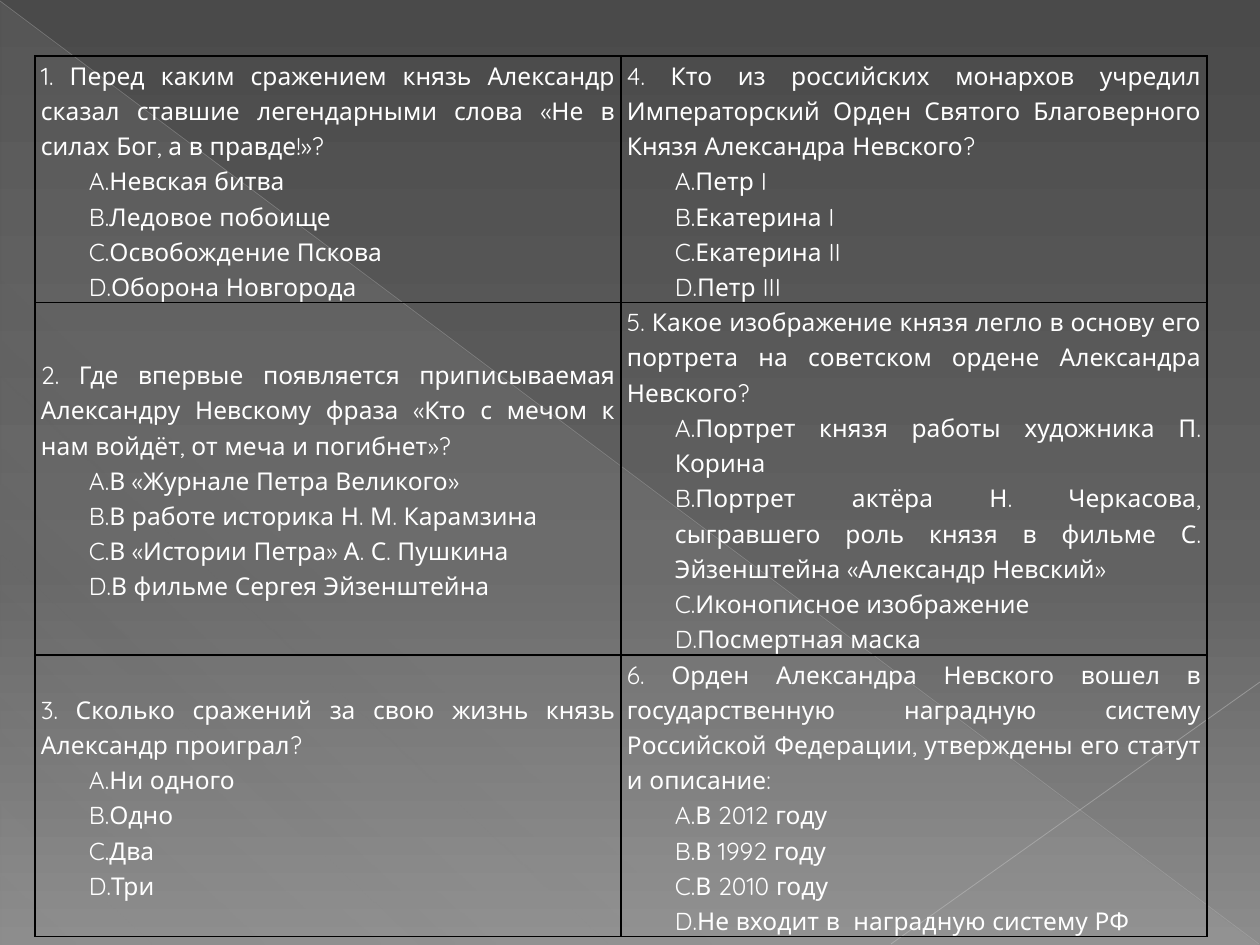
from dataclasses import dataclass

from lxml.etree import SubElement
from pptx import Presentation
from pptx.dml.color import RGBColor
from pptx.enum.shapes import MSO_CONNECTOR, MSO_SHAPE
from pptx.enum.text import MSO_ANCHOR, PP_ALIGN
from pptx.oxml.ns import qn
from pptx.util import Emu, Pt

PX_PER_INCH = 126


@dataclass(frozen=True)
class Theme:
    font: str = "Quicksand"
    text_size: int = 14
    line_spacing: float = 1.15
    text: str = "FFFFFF"
    border: str = "000000"
    border_width: int = 1
    # Gradient stops: position, colour, opacity in percent
    backdrop: tuple = ((0, "4A4A4A", 100), (60, "626262", 100), (100, "8C8C8C", 100))
    sheen: tuple = ((0, "D2D2D2", 10), (70, "D2D2D2", 8), (100, "D2D2D2", 1))
    long_ray: str = "BFBFBF"
    short_ray: str = "C6C6C6"


THEME = Theme()

# Each row holds a left and a right question with its answers
QUIZ = [
    [
        ("1. Перед каким сражением князь Александр сказал ставшие легендарными слова «Не в силах Бог, а в правде!»?",
         ["Невская битва", "Ледовое побоище", "Освобождение Пскова", "Оборона Новгорода"]),
        ("4. Кто из российских монархов учредил Императорский Орден Святого Благоверного Князя Александра Невского?",
         ["Петр I", "Екатерина I", "Екатерина II", "Петр III"]),
    ],
    [
        ("2. Где впервые появляется приписываемая Александру Невскому фраза «Кто с мечом к нам войдёт, от меча и погибнет»?",
         ["В «Журнале Петра Великого»", "В работе историка Н. М. Карамзина",
          "В «Истории Петра» А. С. Пушкина", "В фильме Сергея Эйзенштейна"]),
        ("5. Какое изображение князя легло в основу его портрета на советском ордене Александра Невского?",
         ["Портрет князя работы художника П. Корина",
          "Портрет актёра Н. Черкасова, сыгравшего роль князя в фильме С. Эйзенштейна «Александр Невский»",
          "Иконописное изображение", "Посмертная маска"]),
    ],
    [
        ("3. Сколько сражений за свою жизнь князь Александр проиграл?",
         ["Ни одного", "Одно", "Два", "Три"]),
        ("6. Орден Александра Невского вошел в государственную наградную систему Российской Федерации, утверждены его статут и описание:",
         ["В 2012 году", "В 1992 году", "В 2010 году", "Не входит в  наградную систему РФ"]),
    ],
]
ROW_HEIGHTS = (217, 325, 243)
COLUMN_WIDTH = 586
ANSWER_INDENT = 48
CELL_MARGIN = 6


def px(length):
    return Emu(round(length * 914400 / PX_PER_INCH))


def add_color(parent, color, opacity=100):
    srgb = SubElement(parent, qn("a:srgbClr"), val=color)
    if opacity < 100:
        SubElement(srgb, qn("a:alpha"), val=str(opacity * 1000))


def paint_gradient(fill, owner, stops, angle):
    fill.gradient()
    gradient = owner.find(".//" + qn("a:gradFill"))
    for child in list(gradient):
        gradient.remove(child)
    stop_list = SubElement(gradient, qn("a:gsLst"))
    for position, color, opacity in stops:
        stop = SubElement(stop_list, qn("a:gs"), pos=str(position * 1000))
        add_color(stop, color, opacity)
    SubElement(gradient, qn("a:lin"), ang=str(angle * 60000), scaled="0")


def add_sheen(slide):
    sheen = slide.shapes.add_shape(MSO_SHAPE.RIGHT_TRIANGLE, px(1), px(2), px(1258), px(943))
    sheen.shadow.inherit = False
    paint_gradient(sheen.fill, sheen.element.spPr, THEME.sheen, 133)
    sheen.line.fill.background()


def add_ray(slide, start, end, color, width, opacity):
    ray = slide.shapes.add_connector(
        MSO_CONNECTOR.STRAIGHT, *(px(length) for length in (*start, *end)))
    ray.line.width = Pt(width)
    ray.line.color.rgb = RGBColor.from_string(color)
    properties = ray.element.spPr
    srgb = properties.find(".//" + qn("a:srgbClr"))
    SubElement(srgb, qn("a:alpha"), val=str(opacity * 1000))
    SubElement(properties, qn("a:effectLst"))


def write_text(paragraph, text, *, indent=0, numbering=None):
    paragraph.alignment = PP_ALIGN.JUSTIFY
    paragraph.line_spacing = THEME.line_spacing
    run = paragraph.add_run()
    run.text = text
    run.font.name = THEME.font
    run.font.size = Pt(THEME.text_size)
    run.font.color.rgb = RGBColor.from_string(THEME.text)
    if numbering:
        properties = paragraph._p.get_or_add_pPr()
        properties.set("marL", str(px(indent)))
        properties.set("indent", "0")
        SubElement(properties, qn("a:buAutoNum"), type=numbering)


def add_borders(cell):
    properties = cell._tc.get_or_add_tcPr()
    for side in ("a:lnL", "a:lnR", "a:lnT", "a:lnB"):
        border = SubElement(properties, qn(side), w=str(Pt(THEME.border_width)))
        add_color(SubElement(border, qn("a:solidFill")), THEME.border)


def fill_cell(cell, question, answers):
    add_borders(cell)
    cell.fill.background()
    cell.vertical_anchor = MSO_ANCHOR.MIDDLE
    cell.margin_left = cell.margin_right = px(CELL_MARGIN)
    cell.margin_top = cell.margin_bottom = 0
    write_text(cell.text_frame.paragraphs[0], question)
    for answer in answers:
        write_text(cell.text_frame.add_paragraph(), answer,
                   indent=ANSWER_INDENT, numbering="alphaUcPeriod")


def add_quiz_table(slide):
    columns = len(QUIZ[0])
    quiz_table = slide.shapes.add_table(
        len(QUIZ), columns, px(35), px(56),
        px(columns * COLUMN_WIDTH), px(sum(ROW_HEIGHTS))).table
    quiz_table.first_row = quiz_table.horz_banding = False
    for row_index, (questions, height) in enumerate(zip(QUIZ, ROW_HEIGHTS)):
        quiz_table.rows[row_index].height = px(height)
        for column_index, (question, answers) in enumerate(questions):
            fill_cell(quiz_table.cell(row_index, column_index), question, answers)


def main():
    presentation = Presentation()
    presentation.slide_width, presentation.slide_height = px(1260), px(945)
    slide = presentation.slides.add_slide(presentation.slide_layouts[6])

    # Backdrop with sheen and light rays
    paint_gradient(slide.background.fill, slide.element, THEME.backdrop, 90)
    add_sheen(slide)
    add_ray(slide, (0, 1), (1259, 944), THEME.long_ray, 0.39, 35)
    add_ray(slide, (1260, 682), (891, 944), THEME.short_ray, 0.47, 45)

    # Quiz questions
    add_quiz_table(slide)
    presentation.save("out.pptx")


if __name__ == "__main__":
    main()
